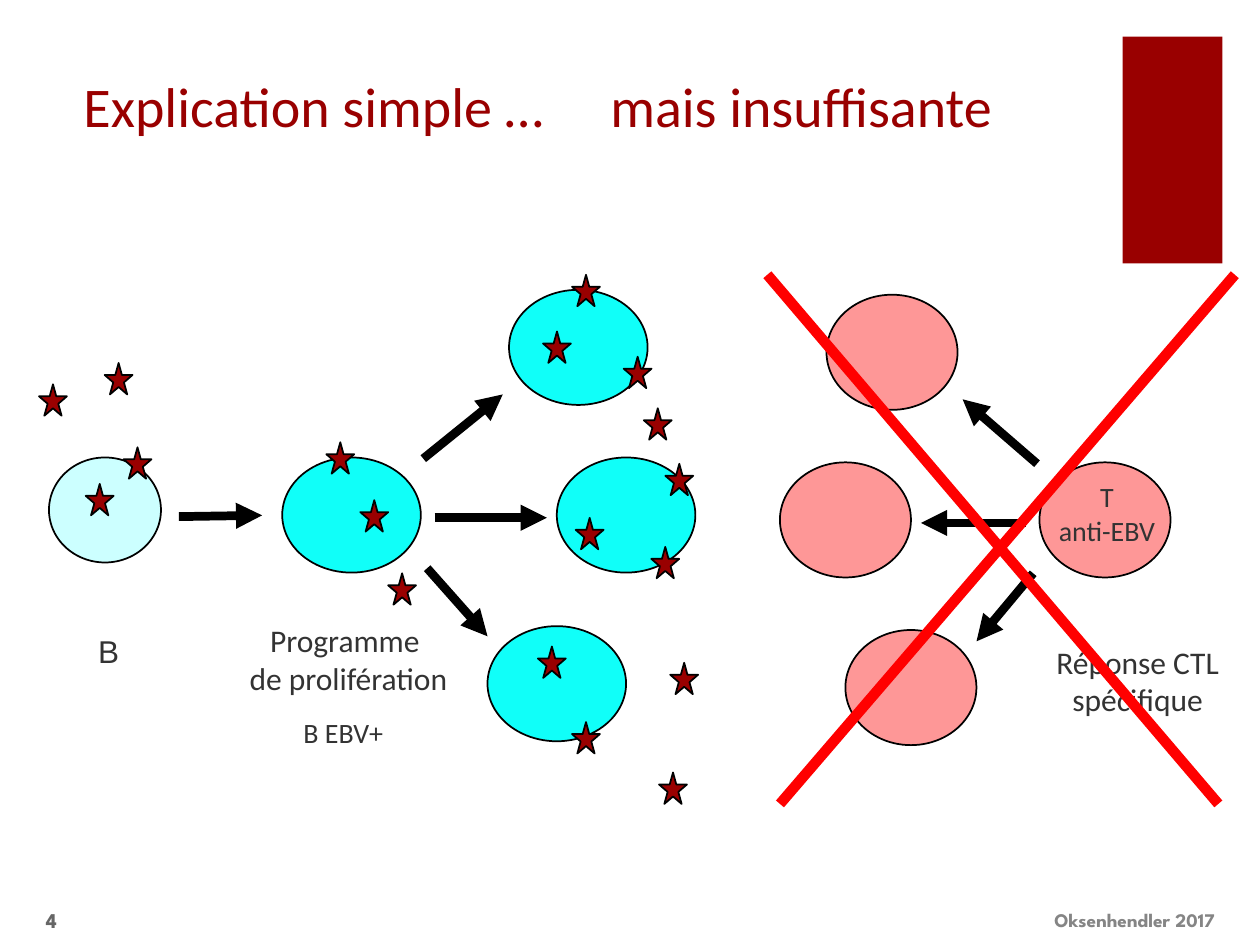
from dataclasses import dataclass
from lxml.etree import SubElement
from pptx import Presentation
from pptx.dml.color import RGBColor
from pptx.enum.shapes import MSO_CONNECTOR, MSO_SHAPE
from pptx.enum.text import MSO_ANCHOR, MSO_AUTO_SIZE, PP_ALIGN
from pptx.oxml.ns import qn
from pptx.util import Pt


@dataclass(frozen=True)
class Theme:
    # Colours
    red: str = "990000"
    cross: str = "FF0000"
    pale: str = "CCFFFF"
    cyan: str = "10FFF9"
    pink: str = "FE9797"
    black: str = "000000"
    text: str = "333333"
    page: str = "666666"
    foot: str = "858585"
    # Fonts and type sizes
    main: str = "Calibri"
    plain: str = "Arial"
    small: str = "League Spartan"
    head: int = 32
    label: int = 18
    note: int = 16
    num: int = 12
    credit: int = 11


class Board:
    def __init__(self, slide, theme):
        self.slide = slide
        self.theme = theme

    def shape(self, kind, box, fill, line=None):
        item = self.slide.shapes.add_shape(kind, *map(Pt, box))
        item.shadow.inherit = False
        item.fill.solid()
        item.fill.fore_color.rgb = RGBColor.from_string(fill)
        if line:
            item.line.color.rgb = RGBColor.from_string(line)
            item.line.width = Pt(1)
        else:
            item.line.fill.background()

    def cells(self, spots, size, fill):
        for spot in spots:
            self.shape(MSO_SHAPE.OVAL, spot + size, fill, self.theme.black)

    def stars(self, spots):
        for spot in spots:
            self.shape(MSO_SHAPE.STAR_5_POINT, spot + (16, 18),
                       self.theme.red, self.theme.black)

    def line(self, ends, color, width, arrow=False):
        item = self.slide.shapes.add_connector(
            MSO_CONNECTOR.STRAIGHT, *map(Pt, ends))
        item.line.color.rgb = RGBColor.from_string(color)
        item.line.width = Pt(width)
        props = item._element.spPr
        if arrow:
            SubElement(props.find(qn("a:ln")), qn("a:tailEnd"),
                       type="triangle")
        SubElement(props, qn("a:effectLst"))

    def fill(self, item, lines, font, size, color, bold=False,
             frame=None, para=None):
        body = item.text_frame
        body.text = "\n".join(lines)
        for key, value in (frame or {}).items():
            setattr(body, key, value)
        style = {"name": font, "size": Pt(size), "bold": bold}
        for part in body.paragraphs:
            for key, value in (para or {}).items():
                setattr(part, key, value)
            for run in part.runs:
                for key, value in style.items():
                    setattr(run.font, key, value)
                run.font.color.rgb = RGBColor.from_string(color)

    def text(self, box, *args, **more):
        item = self.slide.shapes.add_textbox(*map(Pt, box))
        self.fill(item, *args, **more)

    def title(self, box, *args, **more):
        item = self.slide.shapes.title
        for key, value in zip(("left", "top", "width", "height"), box):
            setattr(item, key, Pt(value))
        self.fill(item, *args, **more)


def main():
    deck = Presentation()
    deck.slide_width, deck.slide_height = Pt(720), Pt(540)
    look = Theme()
    board = Board(deck.slides.add_slide(deck.slide_layouts[5]), look)

    # Formats
    head = {"frame": {"word_wrap": True, "auto_size": MSO_AUTO_SIZE.NONE,
                      "vertical_anchor": MSO_ANCHOR.BOTTOM},
            "para": {"alignment": PP_ALIGN.CENTER, "line_spacing": 0.7}}
    fit = {"word_wrap": False, "auto_size": MSO_AUTO_SIZE.SHAPE_TO_FIT_TEXT}
    mid = {"word_wrap": True, "vertical_anchor": MSO_ANCHOR.MIDDLE}
    center = {"alignment": PP_ALIGN.CENTER}

    # Title in two halves, and the corner block
    board.shape(MSO_SHAPE.RECTANGLE, (641.5, 21, 57, 129.6), look.red)
    board.title((0, 26, 358.6, 56), ["Explication simple …"],
                look.main, look.head, look.red, **head)
    board.text((278.6, 26, 358.6, 56), ["mais insuffisante"],
               look.main, look.head, look.red, **head)

    # B cells and T cells
    board.cells([(28, 261.4)], (64, 60), look.pale)
    board.cells([(161.3, 261.4), (278.6, 357.8), (290.9, 165.6),
                 (318.2, 261.4)], (79.2, 65.8), look.cyan)
    board.cells([(594, 264.2), (483.1, 360), (472.3, 168.4),
                 (445.7, 264.2)], (74.9, 65.8), look.pink)

    # Arrows between cells
    for ends in [(102.2, 295.2, 149.8, 294.5),
                 (241.9, 262.1, 287.3, 225.4),
                 (244.1, 324.7, 278.6, 363.6),
                 (248.4, 295.9, 312.5, 295.9),
                 (592.6, 265, 550.1, 228.2),
                 (590.4, 327.6, 558, 366.5),
                 (586.1, 298.8, 526.3, 298.8)]:
        board.line(ends, look.black, 5, arrow=True)

    # Virus stars, from left to right
    board.stars([(22.3, 219.6), (49, 276.5), (59.8, 207.4), (70.6, 255.6),
                 (186.5, 252.7), (205.9, 285.8), (221.8, 327.6),
                 (307.4, 369.4), (310.3, 189.4), (326.9, 157),
                 (326.9, 412.6), (329, 295.9), (356.4, 203.8),
                 (367.9, 233.3), (372.2, 312.5), (376.6, 441.4),
                 (380.2, 265), (383, 378.7)])

    # Labels
    board.text((49, 357.8, 30.2, 36), ["B"],
               look.plain, look.label, look.text, frame=fit)
    board.text((166.3, 405.4, 61.2, 26.6), ["B EBV+"],
               look.main, look.note, look.text, frame=fit)
    for box, lines, size in [
            ((131.8, 351.4, 134.6, 51), ["Programme ", "de prolifération"],
             look.label),
            ((595.4, 363.6, 109.4, 51), ["Réponse CTL", "spécifique"],
             look.label),
            ((596.9, 270.7, 71.3, 46), ["T", "anti-EBV"], look.note)]:
        board.text(box, lines, look.main, size, look.text,
                   frame=fit, para=center)

    # Red cross over the T cells
    for ends in [(438.5, 157, 696.2, 459.4), (705.6, 157, 445.7, 459.4)]:
        board.line(ends, look.cross, 6)

    # Footer
    board.text((595.4, 511.2, 124.6, 28.8), ["Oksenhendler 2017"],
               look.small, look.credit, look.foot, bold=True, frame=mid)
    board.text((0, 511.2, 39.6, 28.8), ["4"], look.small, look.num,
               look.page, bold=True, frame=mid,
               para={"alignment": PP_ALIGN.RIGHT})

    deck.save("out.pptx")


if __name__ == "__main__":
    main()
